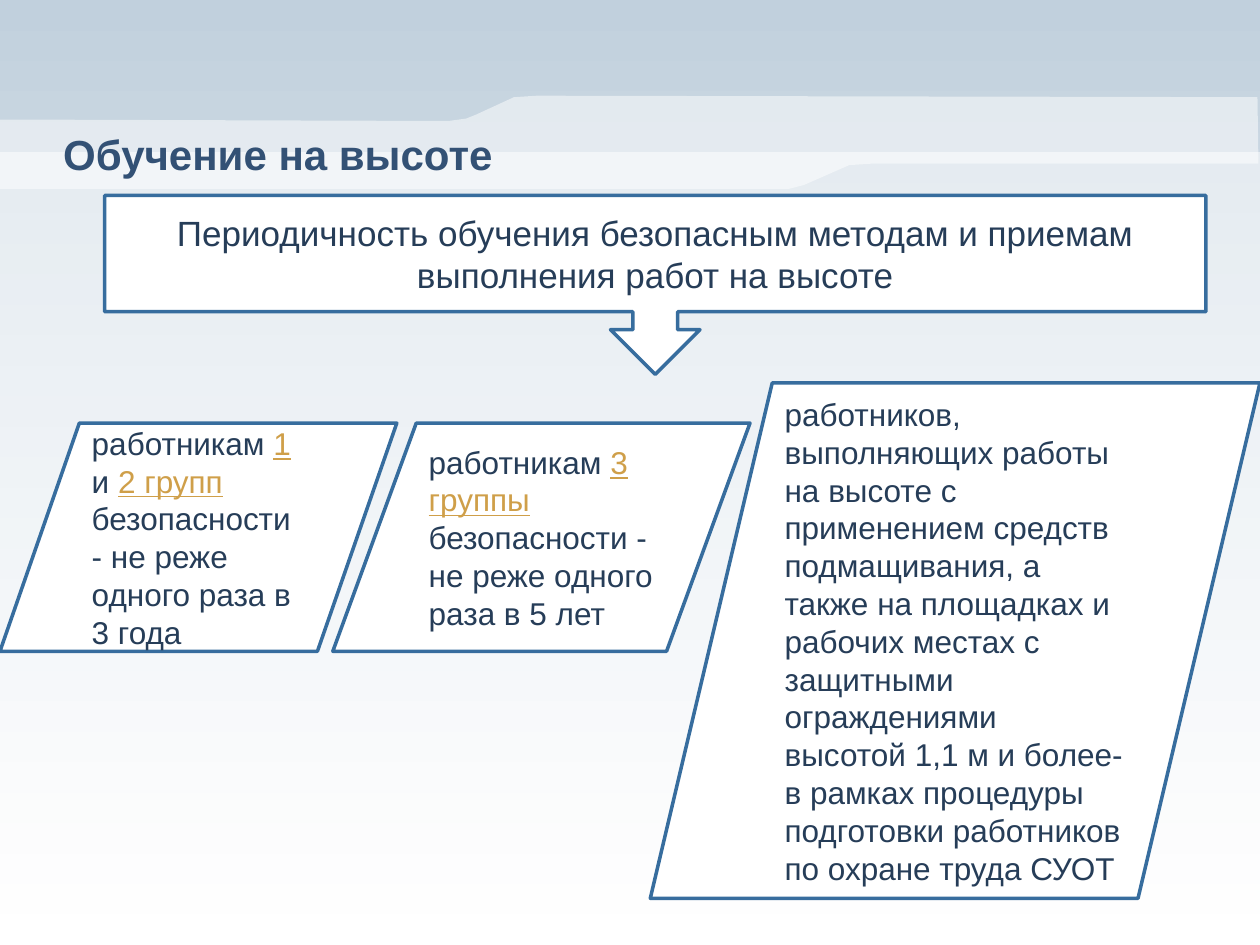
from lxml import etree
from pptx import Presentation, util as u
from pptx.dml.color import RGBColor
from pptx.enum import shapes, text
from pptx.oxml.ns import qn

THEME = {
    "sky": "C1D0DD", "white": "FFFFFF", "title": "335175",
    "body": "263D58", "link": "CF9F49", "outline": "376D9E",
    "font": "Arial", "title_size": 24, "lead_size": 20, "case_size": 18,
    "line_width": 2,
}


def write(frame, runs, size, align=text.PP_ALIGN.LEFT):
    """Fill a frame with one paragraph; runs are (words, format values)."""
    frame.word_wrap = True
    frame.vertical_anchor = text.MSO_ANCHOR.MIDDLE
    paragraph = frame.paragraphs[0]
    paragraph.alignment = align
    for words, style in runs:
        run = paragraph.add_run()
        run.text = words
        values = {"name": THEME["font"], "size": u.Pt(size), "bold": False, **style}
        run.font.color.rgb = RGBColor.from_string(THEME[values.pop("color")])
        for key, value in values.items():
            setattr(run.font, key, value)


def add_panel(preset, box, runs, size, align=text.PP_ALIGN.LEFT):
    """Add a white outlined shape; box is left, top, width, height in cm."""
    panel = slide.shapes.add_shape(preset, *map(u.Cm, box))
    panel.shadow.inherit = False
    panel.fill.solid()
    panel.fill.fore_color.rgb = RGBColor.from_string(THEME["white"])
    panel.line.color.rgb = RGBColor.from_string(THEME["outline"])
    panel.line.width = u.Pt(THEME["line_width"])
    write(panel.text_frame, runs, size, align)


PLAIN = {"color": "body"}
LINK = {"color": "link", "underline": True}

prs = Presentation()
prs.slide_width, prs.slide_height = u.Cm(25.4), u.Cm(19.05)
slide = prs.slides.add_slide(prs.slide_layouts[5])

# Background: gradient from top to bottom
sky = slide.background.fill
sky.gradient()
sky.gradient_angle = 270
for stop, position, color in zip(sky.gradient_stops, (0, 1), ("sky", "white")):
    stop.position = position
    stop.color.rgb = RGBColor.from_string(THEME[color])

# Half-transparent bands
lower_band = [(0, 19.05), (25.4, 19.05), (25.4, 3.07), (0, 3.07)]
stepped_band = [
    (25.35, 1.96), (10.82, 1.93), (10.36, 1.96), (9.6, 2.31), (9.4, 2.39),
    (9.04, 2.44), (0, 2.41), (0, 3.81), (15.9, 3.81), (16.21, 3.73),
    (17.12, 3.33), (17.58, 3.3), (25.37, 3.3),
]
for outline in (lower_band, stepped_band):
    points = [(u.Cm(x), u.Cm(y)) for x, y in outline]
    builder = slide.shapes.build_freeform(*points[0])
    builder.add_line_segments(points[1:], close=True)
    band = builder.convert_to_shape()
    band.shadow.inherit = False
    band.line.fill.background()
    band.fill.solid()
    band.fill.fore_color.rgb = RGBColor.from_string(THEME["white"])
    tint = band.fill._xPr.find(qn("a:solidFill"))[0]
    etree.SubElement(tint, qn("a:alpha"), val="50000")

# Title, brought in front of the bands
title = slide.shapes.title
title.left, title.top, title.width, title.height = map(u.Cm, (1.02, 2.16, 14.1, 1.88))
write(title.text_frame, [("Обучение на высоте", {"color": "title", "bold": True})],
      THEME["title_size"])
slide.shapes._spTree.append(title._element)

# Lead statement with its arrow
add_panel(
    shapes.MSO_SHAPE.DOWN_ARROW_CALLOUT, (2.11, 3.94, 22.2, 3.61),
    [("Периодичность обучения безопасным методам и приемам выполнения работ на высоте", PLAIN)],
    THEME["lead_size"], text.PP_ALIGN.CENTER)

# Training intervals by group of workers
intervals = [
    ((0, 8.53, 8, 4.6), [
        ("работникам ", PLAIN), ("1", LINK), (" и ", PLAIN), ("2 групп", LINK),
        (" безопасности - не реже одного раза в 3 года", PLAIN)]),
    ((6.71, 8.53, 8.41, 4.6), [
        ("работникам ", PLAIN), ("3 группы", LINK),
        (" безопасности - не реже одного раза в 5 лет", PLAIN)]),
    ((13.11, 7.72, 12.29, 10.39), [
        ("работников, выполняющих работы на высоте с применением средств "
         "подмащивания, а также на площадках и рабочих местах с защитными "
         "ограждениями высотой 1,1 м и более- в рамках процедуры подготовки "
         "работников по охране труда СУОТ", PLAIN)]),
]
for box, runs in intervals:
    add_panel(shapes.MSO_SHAPE.FLOWCHART_DATA, box, runs, THEME["case_size"])

prs.save("out.pptx")
